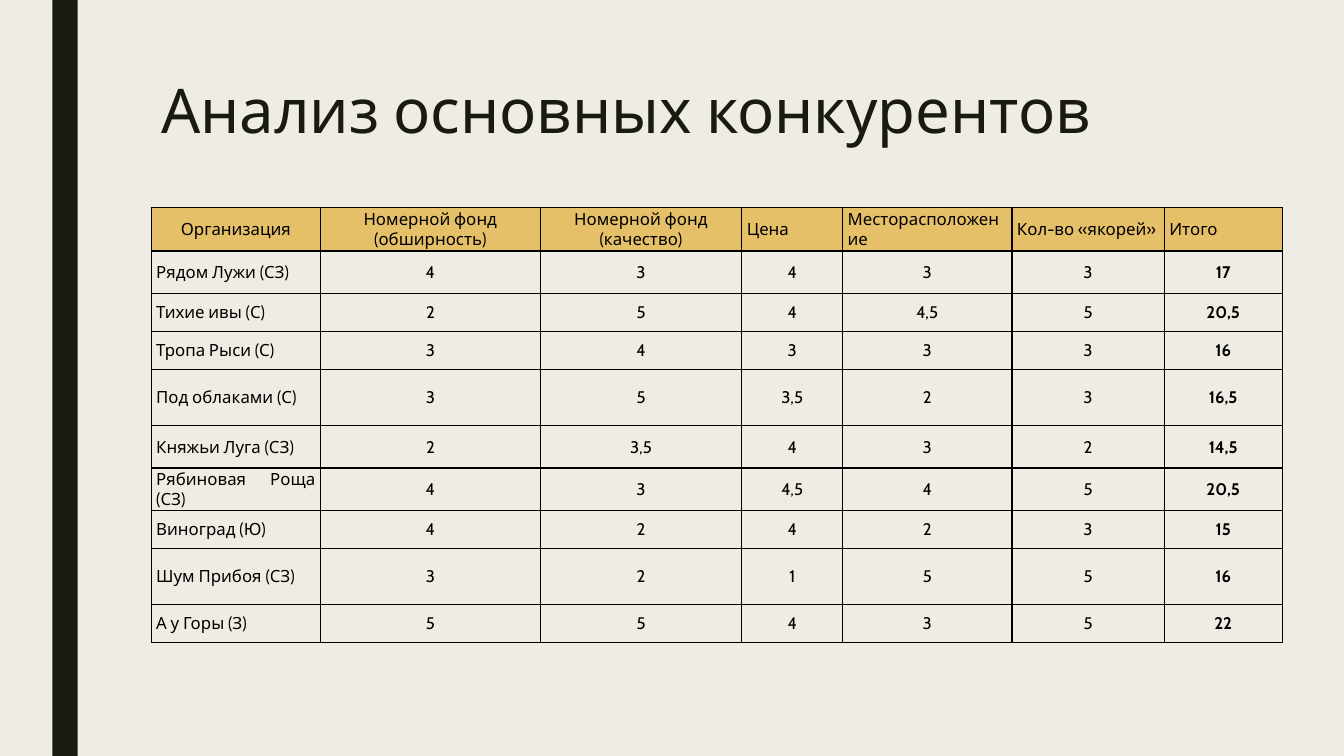
from typing import NamedTuple

from lxml.etree import SubElement
from pptx import Presentation
from pptx.dml.color import RGBColor as Rgb
from pptx.enum.shapes import MSO_SHAPE as Shape
from pptx.enum.text import MSO_ANCHOR as Anchor, PP_ALIGN as Align
from pptx.oxml.ns import qn
from pptx.slide import Slide
from pptx.table import _Cell as Cell
from pptx.util import Inches, Pt

COLORS = {"paper": "EFEDE3", "ink": "191B0E", "header": "E6C069", "black": "000000"}
FONT = "Cabin"
WIDTH, HEIGHT = Inches(13.33), Inches(7.5)
LOW, MEDIUM, TALL = 5.07, 5.6, 7.4


class Criterion(NamedTuple):
    label: str
    width: float
    align: Align = Align.JUSTIFY


class Competitor(NamedTuple):
    name: str
    height: float
    scores: tuple[float, ...]


CRITERIA = [
    Criterion("Организация", 12.6, Align.CENTER),
    Criterion("Номерной фонд (обширность)", 16.35, Align.CENTER),
    Criterion("Номерной фонд (качество)", 15, Align.CENTER),
    Criterion("Цена", 7.5),
    Criterion("Месторасположение", 12.6),
    Criterion("Кол-во «якорей»", 11.33),
    Criterion("Итого", 8.78),
]
COMPETITORS = [
    Competitor("Рядом Лужи (СЗ)", MEDIUM, (4, 3, 4, 3, 3)),
    Competitor("Тихие ивы (С)", LOW, (2, 5, 4, 4.5, 5)),
    Competitor("Тропа Рыси (С)", LOW, (3, 4, 3, 3, 3)),
    Competitor("Под облаками (С)", TALL, (3, 5, 3.5, 2, 3)),
    Competitor("Княжьи Луга (СЗ)", MEDIUM, (2, 3.5, 4, 3, 2)),
    Competitor("Рябиновая Роща (СЗ)", MEDIUM, (4, 3, 4.5, 4, 5)),
    Competitor("Виноград (Ю)", LOW, (4, 2, 4, 2, 3)),
    Competitor("Шум Прибоя (СЗ)", TALL, (3, 2, 1, 5, 5)),
    Competitor("А у Горы (З)", LOW, (5, 5, 4, 3, 5)),
]


def across(percent: float) -> int:
    """Return a share of the slide width."""
    return round(WIDTH * percent / 100)


def down(percent: float) -> int:
    """Return a share of the slide height."""
    return round(HEIGHT * percent / 100)


def color(name: str) -> Rgb:
    """Look up a palette colour."""
    return Rgb.from_string(COLORS[name])


def score_text(score: float) -> str:
    """Write a score with a decimal comma."""
    return f"{score:g}".replace(".", ",")


def draw_stripe(slide: Slide) -> None:
    """Draw the dark vertical stripe on the left."""
    stripe = slide.shapes.add_shape(Shape.RECTANGLE, across(3.9), 0, across(1.88), HEIGHT)
    stripe.shadow.inherit = False
    stripe.fill.solid()
    stripe.fill.fore_color.rgb = color("ink")
    stripe.line.fill.background()


def draw_heading(slide: Slide, text: str) -> None:
    """Write the slide heading."""
    heading = slide.shapes.add_textbox(across(11.25), down(10), across(78.75), down(21.6))
    heading.text_frame.word_wrap = True
    line = heading.text_frame.paragraphs[0]
    line.text = text
    line.line_spacing = 0.89
    line.font.name, line.font.size = FONT, Pt(44)
    line.font.color.rgb = color("ink")


def draw_borders(cell: Cell) -> None:
    """Outline a cell on all four sides."""
    properties = cell._tc.get_or_add_tcPr()
    for side in ("lnL", "lnR", "lnT", "lnB"):
        border = SubElement(properties, qn(f"a:{side}"), w=str(Pt(1)))
        fill = SubElement(border, qn("a:solidFill"))
        SubElement(fill, qn("a:srgbClr"), val=COLORS["black"])


def fill_cell(cell: Cell, text: str, align: Align, bold: bool, header: bool) -> None:
    """Write and format one table cell."""
    cell.margin_left = cell.margin_right = Inches(0.05)
    cell.margin_top = cell.margin_bottom = 0
    cell.vertical_anchor = Anchor.MIDDLE
    draw_borders(cell)
    if header:
        cell.fill.solid()
        cell.fill.fore_color.rgb = color("header")
    else:
        cell.fill.background()
    line = cell.text_frame.paragraphs[0]
    line.text, line.alignment = text, align
    line.font.name, line.font.size, line.font.bold = FONT, Pt(12), bold
    line.font.color.rgb = color("black")


def draw_comparison(slide: Slide) -> None:
    """Draw the competitor table with computed totals."""
    heights = [5.73, *(competitor.height for competitor in COMPETITORS)]
    comparison = slide.shapes.add_table(
        len(heights), len(CRITERIA), across(11.25), down(27.47),
        across(sum(criterion.width for criterion in CRITERIA)), down(sum(heights)),
    ).table
    comparison.first_row = comparison.horz_banding = False
    for row, height in zip(comparison.rows, heights):
        row.height = down(height)
    last = len(CRITERIA) - 1
    for column, criterion in enumerate(CRITERIA):
        comparison.columns[column].width = across(criterion.width)
        fill_cell(comparison.cell(0, column), criterion.label, criterion.align, False, True)
    for row, competitor in enumerate(COMPETITORS, 1):
        marks = [*competitor.scores, sum(competitor.scores)]
        for column, text in enumerate([competitor.name, *map(score_text, marks)]):
            align = Align.CENTER if column else Align.JUSTIFY
            fill_cell(comparison.cell(row, column), text, align, column == last, False)


def main() -> None:
    """Build and save the slide."""
    deck = Presentation()
    deck.slide_width, deck.slide_height = WIDTH, HEIGHT
    slide = deck.slides.add_slide(deck.slide_layouts[6])
    slide.background.fill.solid()
    slide.background.fill.fore_color.rgb = color("paper")
    draw_stripe(slide)
    draw_heading(slide, "Анализ основных конкурентов")
    draw_comparison(slide)
    deck.save("out.pptx")


if __name__ == "__main__":
    main()
